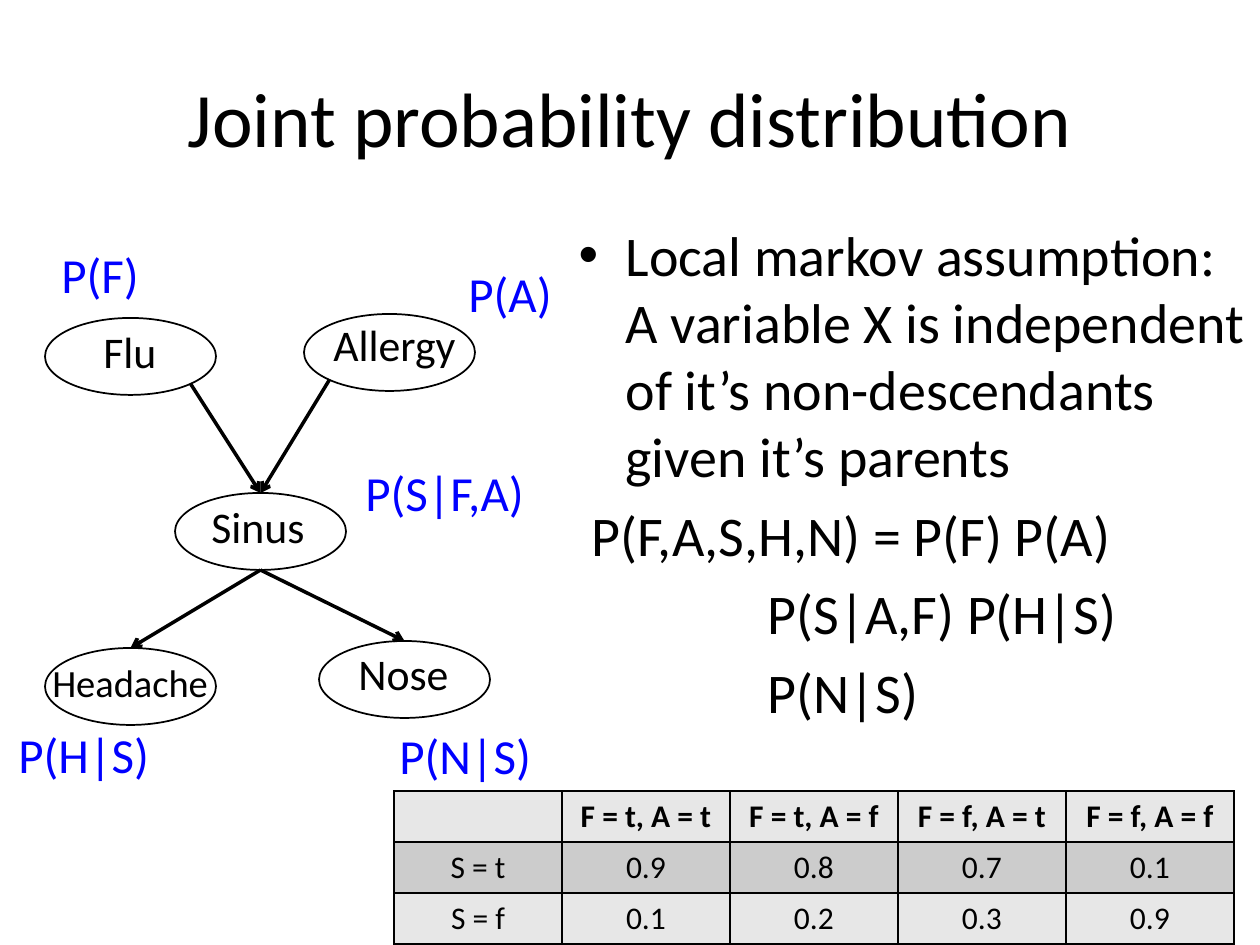
import pptx
import pptx.util
import pptx.dml.color
import pptx.enum.shapes
import pptx.enum.text
import pptx.oxml
import pptx.oxml.ns
from lxml import etree

BLACK = pptx.dml.color.RGBColor(0x00, 0x00, 0x00)
BLUE = pptx.dml.color.RGBColor(0x00, 0x00, 0xFF)
LIGHT = pptx.dml.color.RGBColor(0xE7, 0xE7, 0xE7)
DARK = pptx.dml.color.RGBColor(0xCC, 0xCC, 0xCC)
CENTER = pptx.enum.text.PP_ALIGN.CENTER
FONT = "Calibri"

# Content; places and sizes in px
TITLE = "Joint probability distribution"
TITLE_BOX = (63, 38, 1134, 158)
BODY_BOX = (566, 214, 694, 624)
BODY = [  # text, left margin, first-line indent
    ("Local markov assumption: A variable X is independent of it’s "
     "non-descendants given it’s parents", 47, -47),
    ("P(F,A,S,H,N) = P(F) P(A)", 13, 0),
    ("P(S|A,F) P(H|S)", 189, 0),
    ("P(N|S)", 189, 0),
]
NODE_W, NODE_H = 171, 77
NODES = {  # name: ellipse corner, label box, text size
    "Flu": ((45, 318), (91, 319, 110, 66), 25),
    "Allergy": ((304, 314), (321, 312, 170, 66), 25),
    "Sinus": ((175, 493), (199, 494, 134, 66), 25),
    "Headache": ((45, 648), (40, 653, 213, 59), 22),
    "Nose": ((319, 641), (346, 641, 142, 66), 25),
}
SIDES = {"top": (0.5, 0), "bottom": (0.5, 1),
         "bottom left": (0.15, 0.85), "bottom right": (0.85, 0.85)}
EDGES = [
    ("Flu", "bottom right", "Sinus", "top"),
    ("Allergy", "bottom left", "Sinus", "top"),
    ("Sinus", "bottom", "Headache", "top"),
    ("Sinus", "bottom", "Nose", "top"),
]
FACTORS = [
    ("P(F)", (49, 238, 103, 72)),
    ("P(A)", (456, 257, 110, 72)),
    ("P(S|F,A)", (353, 456, 190, 72)),
    ("P(H|S)", (6, 718, 158, 72)),
    ("P(N|S)", (387, 719, 159, 72)),
]
TABLE_CORNER, COL_W, ROW_H = (394, 791), 168, 51
TABLE = [
    ("", "F = t, A = t", "F = t, A = f", "F = f, A = t", "F = f, A = f"),
    ("S = t", "0.9", "0.8", "0.7", "0.1"),
    ("S = f", "0.1", "0.2", "0.3", "0.9"),
]


def px(*lengths):
    return [round(n * 914400 / 126) for n in lengths]


def write(paragraph, text, size, color=BLACK, bold=False):
    run = paragraph.add_run()
    run.text = text
    run.font.color.rgb = color
    formats = {"name": FONT, "size": pptx.util.Pt(size), "bold": bold}
    for key, value in formats.items():
        setattr(run.font, key, value)


def place(placeholder, box):
    for key, value in zip(("left", "top", "width", "height"), px(*box)):
        setattr(placeholder, key, value)


def add_label(shapes, text, box, size, color=BLACK, wrap=True):
    frame = shapes.add_textbox(*px(*box)).text_frame
    frame.word_wrap = wrap
    write(frame.paragraphs[0], text, size, color)


def sub(parent, tag, **attributes):
    return etree.SubElement(parent, pptx.oxml.ns.qn(tag), attributes)


def side_point(name, side):
    (left, top), (fx, fy) = NODES[name][0], SIDES[side]
    return px(left + fx * NODE_W, top + fy * NODE_H)


def add_node(slide, name):
    corner, label_box, size = NODES[name]
    group = slide.shapes.add_group_shape()
    ellipse = group.shapes.add_shape(pptx.enum.shapes.MSO_SHAPE.OVAL,
                                     *px(*corner, NODE_W, NODE_H))
    ellipse.shadow.inherit = False
    ellipse.fill.background()
    ellipse.line.color.rgb = BLACK
    ellipse.line.width = pptx.util.Pt(1)
    add_label(group.shapes, name, label_box, size)


def add_arrow(slide, start, start_side, end, end_side):
    arrow = slide.shapes.add_connector(
        pptx.enum.shapes.MSO_CONNECTOR.STRAIGHT,
        *side_point(start, start_side), *side_point(end, end_side))
    arrow.line.color.rgb = BLACK
    arrow.line.width = pptx.util.Pt(2)
    sub(arrow.line._get_or_add_ln(), "a:tailEnd", type="arrow")
    sub(arrow._element.spPr, "a:effectLst")


def add_borders(cell):
    properties = cell._tc.get_or_add_tcPr()
    for position, tag in enumerate(("a:lnL", "a:lnR", "a:lnT", "a:lnB")):
        line = sub(properties, tag, w="12700")
        sub(sub(line, "a:solidFill"), "a:srgbClr", val=str(BLACK))
        properties.insert(position, line)  # borders come before the fill


def add_body(slide):
    body = slide.placeholders[1]
    place(body, BODY_BOX)
    frame = body.text_frame
    frame.auto_size = pptx.enum.text.MSO_AUTO_SIZE.NONE
    for i, (text, margin, indent) in enumerate(BODY):
        paragraph = frame.add_paragraph() if i else frame.paragraphs[0]
        write(paragraph, text, 32)
        properties = paragraph._p.get_or_add_pPr()
        for key, value in zip(("marL", "indent"), px(margin, indent)):
            properties.set(key, str(value))
        if indent:
            sub(properties, "a:buChar", char="•")
        else:
            sub(properties, "a:buNone")


def add_table(slide):
    rows, cols = len(TABLE), len(TABLE[0])
    table = slide.shapes.add_table(
        rows, cols, *px(*TABLE_CORNER, cols * COL_W, rows * ROW_H)).table
    for r, row in enumerate(TABLE):
        for c, text in enumerate(row):
            cell = table.cell(r, c)
            cell.fill.solid()
            cell.fill.fore_color.rgb = DARK if r % 2 else LIGHT
            add_borders(cell)
            paragraph = cell.text_frame.paragraphs[0]
            paragraph.alignment = CENTER
            if text:
                write(paragraph, text, 18, bold=r == 0)


def main():
    deck = pptx.Presentation()
    deck.slide_width, deck.slide_height = px(1260, 945)
    slide = deck.slides.add_slide(deck.slide_layouts[1])

    # Title
    title = slide.shapes.title
    place(title, TITLE_BOX)
    title.text_frame.vertical_anchor = pptx.enum.text.MSO_ANCHOR.MIDDLE
    title.text_frame.paragraphs[0].alignment = CENTER
    write(title.text_frame.paragraphs[0], TITLE, 44)

    # Network
    for name in NODES:
        add_node(slide, name)
    for edge in EDGES:
        add_arrow(slide, *edge)
    for text, box in FACTORS:
        add_label(slide.shapes, text, box, 28, BLUE, wrap=False)

    # Assumption, factorisation and conditional table
    add_body(slide)
    add_table(slide)
    deck.save("out.pptx")


if __name__ == "__main__":
    main()
